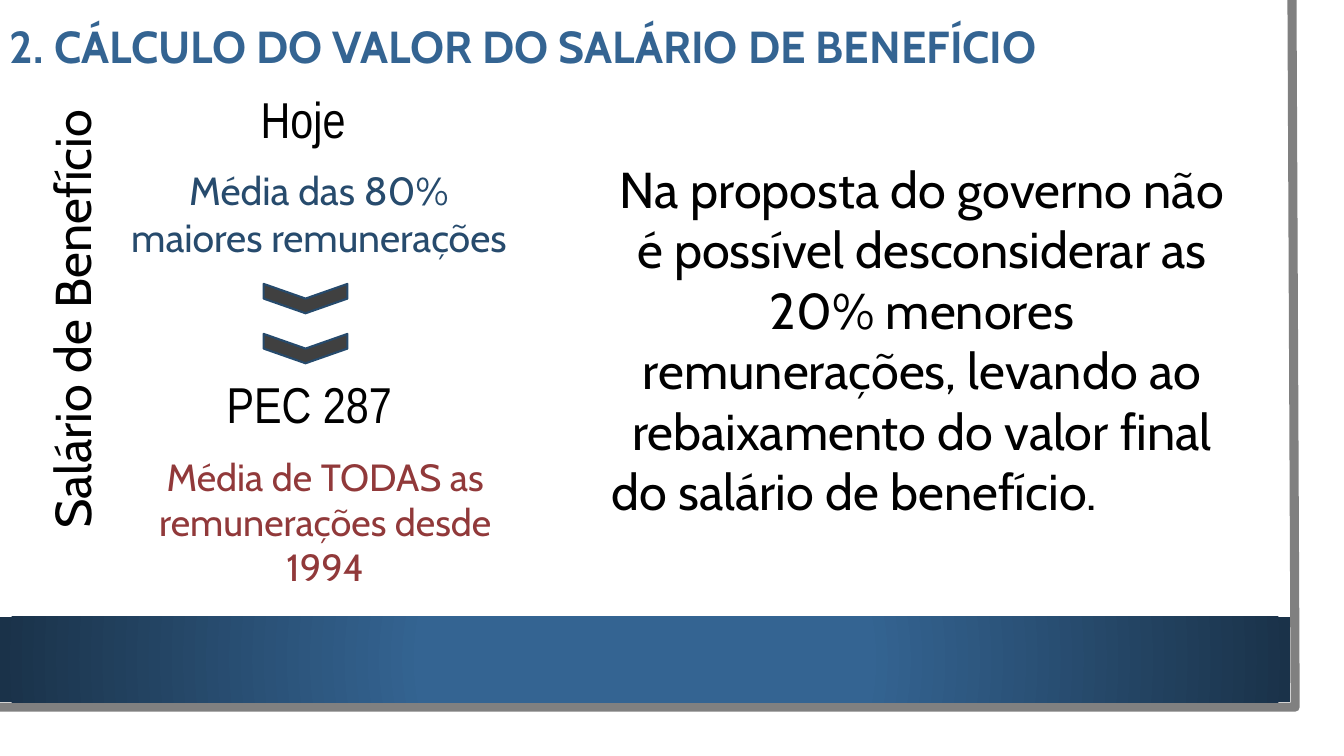
import lxml.etree
import pptx
import pptx.dml.color
import pptx.enum.shapes
import pptx.enum.text
import pptx.oxml.ns
import pptx.util

Cm = pptx.util.Cm
ALIGN = pptx.enum.text.PP_ALIGN
ANCHOR = pptx.enum.text.MSO_ANCHOR
SHAPE = pptx.enum.shapes.MSO_SHAPE


def color(hex_code):
    """Turn a hex string into a colour."""
    return pptx.dml.color.RGBColor.from_string(hex_code)


def add_text(slide, box, lines, size, hex_code="000000", font="Cabin",
             bold=False, anchor=ANCHOR.TOP, spacing=1.0):
    """Place (text, alignment) lines in a box and return its text frame."""
    frame = slide.shapes.add_textbox(*map(Cm, box)).text_frame
    frame.word_wrap = True
    frame.vertical_anchor = anchor
    font_format = {"name": font, "size": pptx.util.Pt(size), "bold": bold}
    for index, (text, alignment) in enumerate(lines):
        paragraph = frame.add_paragraph() if index else frame.paragraphs[0]
        paragraph.alignment = alignment
        paragraph.line_spacing = spacing
        run = paragraph.add_run()
        run.text = text
        for attribute, value in font_format.items():
            setattr(run.font, attribute, value)
        run.font.color.rgb = color(hex_code)
    return frame


def add_page_edge(slide, left, top, width, height):
    """Draw the grey edge along the right and bottom of the page."""
    builder = slide.shapes.build_freeform(
        Cm(left + width - 0.08), Cm(top), scale=1.0)
    builder.add_line_segments(
        [(Cm(left + width), Cm(top + height)), (Cm(left), Cm(top + height))],
        close=False)
    edge = builder.convert_to_shape()
    edge.shadow.inherit = False
    edge.fill.background()
    edge.line.color.rgb = color("808080")
    edge.line.width = pptx.util.Pt(6.5)


def add_footer_band(slide, left, top, width, height):
    """Draw the blue band that darkens outwards from its centre."""
    band = slide.shapes.add_shape(
        SHAPE.RECTANGLE, Cm(left), Cm(top), Cm(width), Cm(height))
    band.shadow.inherit = False
    band.line.fill.background()
    band.fill.gradient()
    shades = [(0.34, "346492"), (1.0, "1A3249")]
    for stop, (position, hex_code) in zip(band.fill.gradient_stops, shades):
        stop.position = position
        stop.color.rgb = color(hex_code)
    qn = pptx.oxml.ns.qn
    gradient = band.fill._xPr.find(qn("a:gradFill"))
    gradient.remove(gradient.find(qn("a:lin")))
    circle = lxml.etree.SubElement(gradient, qn("a:path"), {"path": "circle"})
    lxml.etree.SubElement(circle, qn("a:fillToRect"),
                          dict.fromkeys("ltrb", "50000"))


def add_comparison(slide, left, top):
    """Compare today's rule with PEC 287 beside a vertical heading."""
    heading = add_text(slide, (left, top, 2.06, 11.48),
                       [("Salário de Benefício", ALIGN.LEFT)], 36)
    heading._txBody.bodyPr.set("vert", "vert270")

    rules = [
        ("Hoje", ALIGN.LEFT, (5.41, 0, 3.4, 1.8), 36, "000000", "Arial Narrow"),
        ("Média das 80% maiores remunerações", ALIGN.CENTER,
         (1.93, 1.96, 10.39, 2.64), 28, "274B6D", "Cabin"),
        ("PEC 287", ALIGN.CENTER, (4.42, 7.19, 4.93, 1.8), 36, "000000",
         "Arial Narrow"),
        ("Média de TODAS as remunerações desde 1994", ALIGN.CENTER,
         (2.27, 9.2, 10.03, 3.84), 27, "91393A", "Cabin"),
    ]
    for text, alignment, (x, y, width, height), size, hex_code, font in rules:
        add_text(slide, (left + x, top + y, width, height),
                 [(text, alignment)], size, hex_code, font)

    for step in range(2):
        chevron = slide.shapes.add_shape(
            SHAPE.CHEVRON, Cm(left + 6.42), Cm(top + 4.37 + step * 1.26),
            Cm(0.74), Cm(2.11))
        chevron.rotation = 90
        chevron.shadow.inherit = False
        chevron.fill.solid()
        chevron.fill.fore_color.rgb = color("404040")
        chevron.line.color.rgb = color("264A6C")
        chevron.line.width = pptx.util.Pt(1.5)


def add_message(slide, left, top, width, height):
    """State the effect of the proposal, its last line set flush left."""
    add_text(slide, (left, top, width, height), [
        ("Na proposta do governo não é possível desconsiderar as 20% menores "
         "remunerações, levando ao rebaixamento do valor final", ALIGN.CENTER),
        ("do salário de benefício.", ALIGN.LEFT),
    ], 36)


def main():
    """Build the slide and save it."""
    presentation = pptx.Presentation()
    presentation.slide_width = Cm(33.87)
    presentation.slide_height = Cm(19.05)
    slide = presentation.slides.add_slide(presentation.slide_layouts[6])
    add_page_edge(slide, -0.08, 0, 32.72, 17.82)
    add_footer_band(slide, 0, 15.54, 32.51, 2.16)
    add_text(slide, (0, 0.13, 31.75, 1.85),
             [("2. CÁLCULO DO VALOR DO SALÁRIO DE BENEFÍCIO", ALIGN.LEFT)],
             32, "346492", bold=True, anchor=ANCHOR.BOTTOM, spacing=0.9)
    add_comparison(slide, 0.91, 2.1)
    add_message(slide, 15.16, 3.86, 16.15, 9.5)
    presentation.save("out.pptx")


if __name__ == "__main__":
    main()
